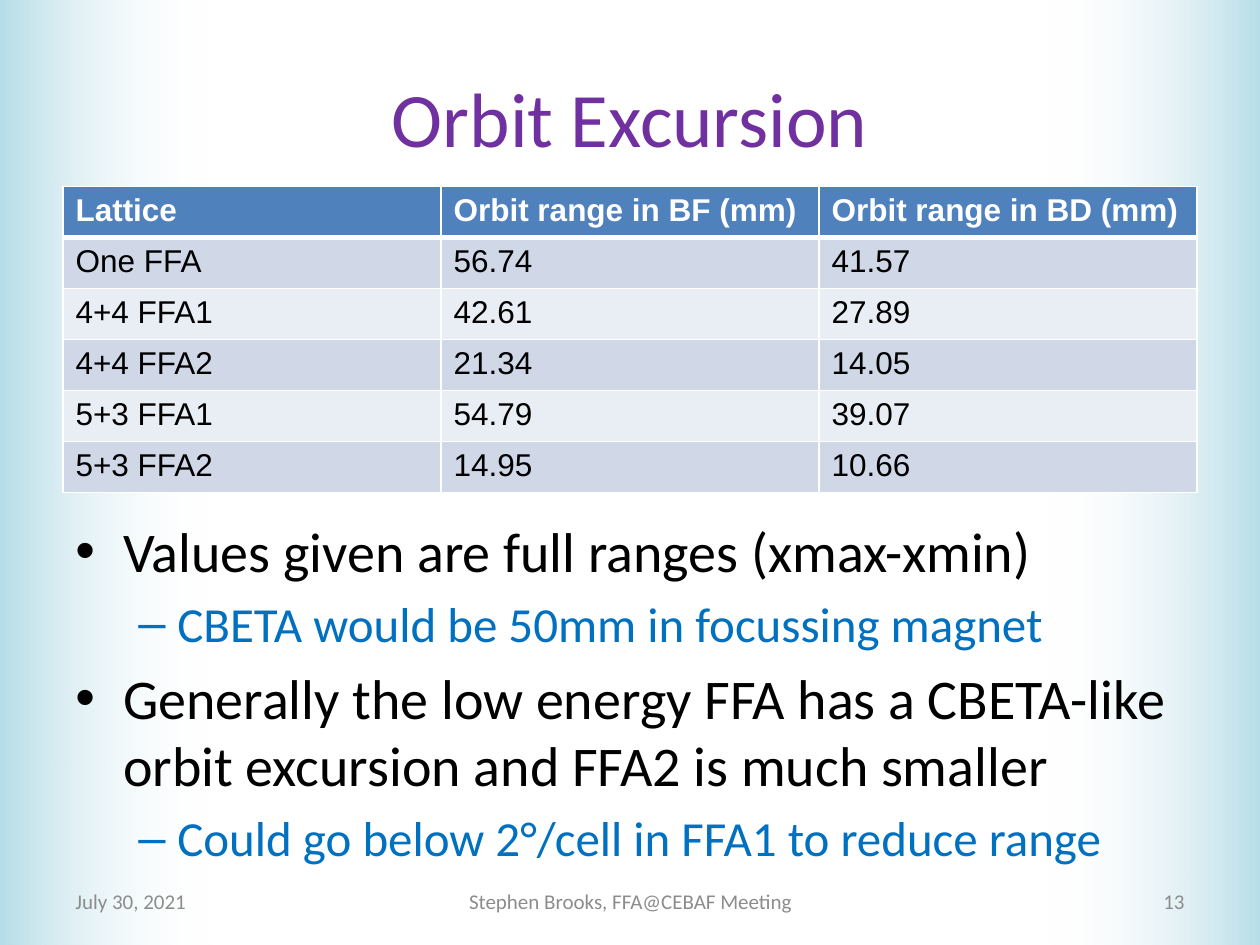
from dataclasses import dataclass

from lxml import etree
from pptx import Presentation
from pptx.dml.color import RGBColor
from pptx.enum.shapes import MSO_SHAPE
from pptx.enum.text import MSO_ANCHOR, PP_ALIGN
from pptx.oxml.ns import qn
from pptx.util import Inches, Pt

RECTANGLE = MSO_SHAPE.RECTANGLE
TOP, MIDDLE = MSO_ANCHOR.TOP, MSO_ANCHOR.MIDDLE
LEFT, CENTER, RIGHT = PP_ALIGN.LEFT, PP_ALIGN.CENTER, PP_ALIGN.RIGHT
TITLE_ONLY = 5


@dataclass(frozen=True)
class Theme:
    text_font: str = "Calibri"
    table_font: str = "Arial"
    title_size: int = 44
    table_size: int = 18
    footer_size: int = 12
    title: str = "7030A0"
    edge: str = "B7DEE8"
    white: str = "FFFFFF"
    black: str = "000000"
    header: str = "4F81BD"
    bands: tuple = ("D0D8E8", "E9EDF4")
    footer: str = "8C8C8C"


@dataclass(frozen=True)
class BulletLevel:
    mark: str
    size: int
    color: str
    margin: float
    hanging: float


THEME = Theme()
LEVELS = (
    BulletLevel("•", 32, THEME.black, 0.38, 0.38),
    BulletLevel("–", 28, "0070C0", 0.81, 0.31),
)

# Page grid in inches
WIDTH, HEIGHT = 10, 7.5
MARGIN = 0.5
CONTENT = WIDTH - 2 * MARGIN
STRIP = 1.69
TABLE_TOP, ROW_HEIGHT = 1.48, 0.405
BODY_TOP, FOOTER_TOP = 4.05, 6.95

TABLE_ROWS = (
    ("Lattice", "Orbit range in BF (mm)", "Orbit range in BD (mm)"),
    ("One FFA", "56.74", "41.57"),
    ("4+4 FFA1", "42.61", "27.89"),
    ("4+4 FFA2", "21.34", "14.05"),
    ("5+3 FFA1", "54.79", "39.07"),
    ("5+3 FFA2", "14.95", "10.66"),
)
BULLETS = (
    (0, "Values given are full ranges (xmax-xmin)"),
    (1, "CBETA would be 50mm in focussing magnet"),
    (0, "Generally the low energy FFA has a CBETA-like orbit excursion and FFA2 is much smaller"),
    (1, "Could go below 2°/cell in FFA1 to reduce range"),
)
FOOTERS = (
    (MARGIN, 2.33, LEFT, "July 30, 2021"),
    (3.42, 3.17, CENTER, "Stephen Brooks, FFA@CEBAF Meeting"),
    (7.17, 2.33, RIGHT, "13"),
)


def box(left, top, width, height):
    return [Inches(value) for value in (left, top, width, height)]


def format_font(paragraph, name, size, color, bold=False):
    font = paragraph.font
    font.name, font.size, font.bold = name, Pt(size), bold
    font.color.rgb = RGBColor.from_string(color)


def add_edge_strip(slide, left, rotation):
    """Add a side strip that fades towards the middle, behind everything."""
    strip = slide.shapes.add_shape(RECTANGLE, *box(left, 0, STRIP, HEIGHT))
    strip.rotation = rotation
    strip.shadow.inherit = False
    strip.line.fill.background()
    strip.fill.gradient()
    strip.fill.gradient_angle = 0
    for stop, color, position in zip(strip.fill.gradient_stops, (THEME.edge, THEME.white), (0, 1)):
        stop.color.rgb = RGBColor.from_string(color)
        stop.position = position
    last_color = list(strip._element.spPr.iter(qn("a:srgbClr")))[-1]
    etree.SubElement(last_color, qn("a:alpha"), val="0")
    slide.shapes._spTree.insert(2, strip._element)


def set_title(slide, text):
    title = slide.shapes.title
    title.left, title.top, title.width, title.height = box(MARGIN, 0.3, CONTENT, 1.25)
    frame = title.text_frame
    frame.text = text
    frame.vertical_anchor = MIDDLE
    paragraph = frame.paragraphs[0]
    paragraph.alignment = CENTER
    format_font(paragraph, THEME.text_font, THEME.title_size, THEME.title)


def set_borders(cell, bottom_width):
    properties = cell._tc.get_or_add_tcPr()
    widths = {"a:lnL": 1, "a:lnR": 1, "a:lnT": 1, "a:lnB": bottom_width}
    for index, (tag, width) in enumerate(widths.items()):
        line = etree.Element(qn(tag), w=str(Pt(width)))
        fill = etree.SubElement(line, qn("a:solidFill"))
        etree.SubElement(fill, qn("a:srgbClr"), val=THEME.white)
        properties.insert(index, line)


def add_lattice_table(slide, rows):
    area = box(MARGIN, TABLE_TOP, CONTENT, ROW_HEIGHT * len(rows))
    table = slide.shapes.add_table(len(rows), len(rows[0]), *area).table
    for row_index, row in enumerate(rows):
        is_header = row_index == 0
        fill = THEME.header if is_header else THEME.bands[(row_index - 1) % 2]
        color = THEME.white if is_header else THEME.black
        for column_index, text in enumerate(row):
            cell = table.cell(row_index, column_index)
            cell.text = text
            cell.fill.solid()
            cell.fill.fore_color.rgb = RGBColor.from_string(fill)
            set_borders(cell, 3 if is_header else 1)
            format_font(cell.text_frame.paragraphs[0], THEME.table_font,
                        THEME.table_size, color, is_header)


def add_text_frame(slide, area, anchor):
    frame = slide.shapes.add_textbox(*area).text_frame
    frame.word_wrap = True
    frame.vertical_anchor = anchor
    return frame


def add_bullets(slide, bullets):
    area = box(MARGIN, BODY_TOP, CONTENT, FOOTER_TOP - BODY_TOP)
    frame = add_text_frame(slide, area, TOP)
    for index, (level_index, text) in enumerate(bullets):
        level = LEVELS[level_index]
        paragraph = frame.add_paragraph() if index else frame.paragraphs[0]
        paragraph.text = text
        paragraph.level = level_index
        paragraph.space_before = Pt(0.2 * level.size)
        properties = paragraph._p.get_or_add_pPr()
        properties.set("marL", str(Inches(level.margin)))
        properties.set("indent", str(-Inches(level.hanging)))
        etree.SubElement(properties, qn("a:buFont"), typeface=THEME.table_font)
        etree.SubElement(properties, qn("a:buChar"), char=level.mark)
        format_font(paragraph, THEME.text_font, level.size, level.color)


def add_footer(slide, left, width, alignment, text):
    frame = add_text_frame(slide, box(left, FOOTER_TOP, width, 0.4), MIDDLE)
    frame.text = text
    paragraph = frame.paragraphs[0]
    paragraph.alignment = alignment
    format_font(paragraph, THEME.text_font, THEME.footer_size, THEME.footer)


def main():
    presentation = Presentation()
    presentation.slide_width, presentation.slide_height = Inches(WIDTH), Inches(HEIGHT)
    slide = presentation.slides.add_slide(presentation.slide_layouts[TITLE_ONLY])

    # Background strips
    add_edge_strip(slide, 0, 0)
    add_edge_strip(slide, WIDTH - STRIP, 180)

    # Content
    set_title(slide, "Orbit Excursion")
    add_lattice_table(slide, TABLE_ROWS)
    add_bullets(slide, BULLETS)

    # Footer line
    for footer in FOOTERS:
        add_footer(slide, *footer)

    presentation.save("out.pptx")


if __name__ == "__main__":
    main()
